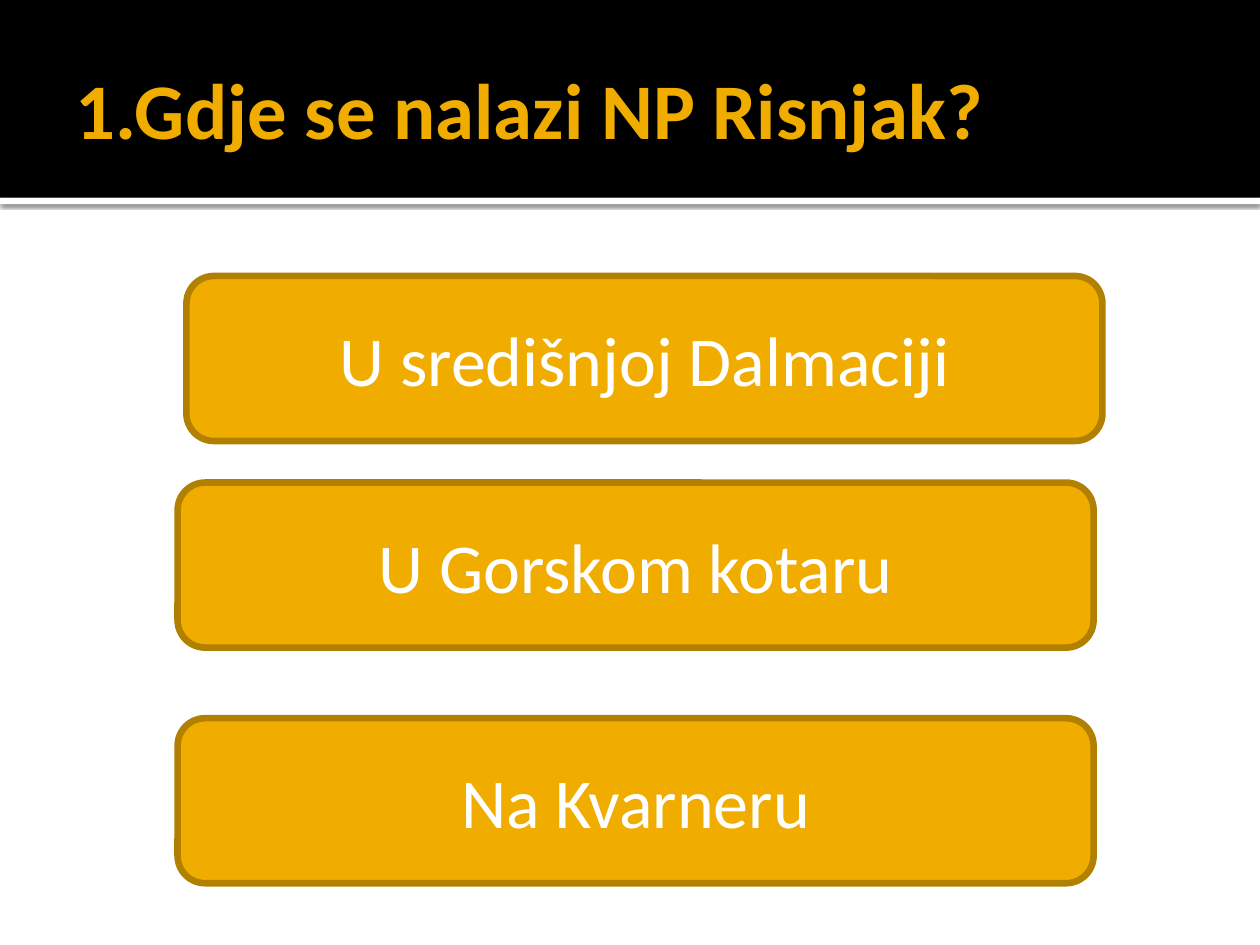
"""Build a quiz slide with a title band and three answer boxes."""
from lxml.etree import SubElement
from pptx import Presentation
from pptx.dml.color import RGBColor
from pptx.enum.shapes import MSO_SHAPE
from pptx.enum.text import MSO_ANCHOR, PP_ALIGN
from pptx.oxml.ns import qn
from pptx.util import Inches, Pt

BLACK = RGBColor(0x00, 0x00, 0x00)
WHITE = RGBColor(0xFF, 0xFF, 0xFF)
AMBER = RGBColor(0xF0, 0xAD, 0x00)
BROWN = RGBColor(0xB2, 0x80, 0x00)
BAND_HEIGHT = Inches(1.57)
ANSWERS = [
    ("U središnjoj Dalmaciji", 1.48, 2.19),
    ("U Gorskom kotaru", 1.41, 3.83),
    ("Na Kvarneru", 1.41, 5.7),
]


def add_box(slide, kind, left, top, width, height, color):
    box = slide.shapes.add_shape(kind, left, top, width, height)
    box.shadow.inherit = False
    box.fill.solid()
    box.fill.fore_color.rgb = color
    box.line.fill.background()
    return box


def write_text(box, text, size, color, alignment, bold=False):
    frame = box.text_frame
    frame.word_wrap = True
    frame.vertical_anchor = MSO_ANCHOR.MIDDLE
    para = frame.paragraphs[0]
    para.alignment = alignment
    span = para.add_run()
    span.text = text
    span.font.name = "Calibri"
    span.font.size = Pt(size)
    span.font.bold = bold
    span.font.color.rgb = color


deck = Presentation()
deck.slide_width = Inches(10)
deck.slide_height = Inches(7.5)
page = deck.slides.add_slide(deck.slide_layouts[6])
page.background.fill.solid()
page.background.fill.fore_color.rgb = WHITE

strip = add_box(page, MSO_SHAPE.RECTANGLE, 0, BAND_HEIGHT, deck.slide_width, Inches(0.05), WHITE)
effects = strip.element.spPr.find(qn("a:effectLst"))
shadow = SubElement(effects, qn("a:outerShdw"), blurRad=str(Pt(2.5)), dist=str(Pt(0.8)),
                    dir="5400000", algn="tl", rotWithShape="0")
shade = SubElement(shadow, qn("a:srgbClr"), val=str(BLACK))
SubElement(shade, qn("a:alpha"), val="60000")
add_box(page, MSO_SHAPE.RECTANGLE, 0, 0, deck.slide_width, BAND_HEIGHT, BLACK)

title = page.shapes.add_textbox(Inches(0.5), Inches(0.17), Inches(9), Inches(1.37))
title.text_frame.margin_right = Inches(0.05)
write_text(title, "1.Gdje se nalazi NP Risnjak?", 45, AMBER, PP_ALIGN.LEFT, bold=True)

for answer, left, top in ANSWERS:
    box = add_box(page, MSO_SHAPE.ROUNDED_RECTANGLE, Inches(left), Inches(top),
                  Inches(7.27), Inches(1.31), AMBER)
    box.line.color.rgb = BROWN
    box.line.width = Pt(3.78)
    write_text(box, answer, 40, WHITE, PP_ALIGN.CENTER)

deck.save("out.pptx")
